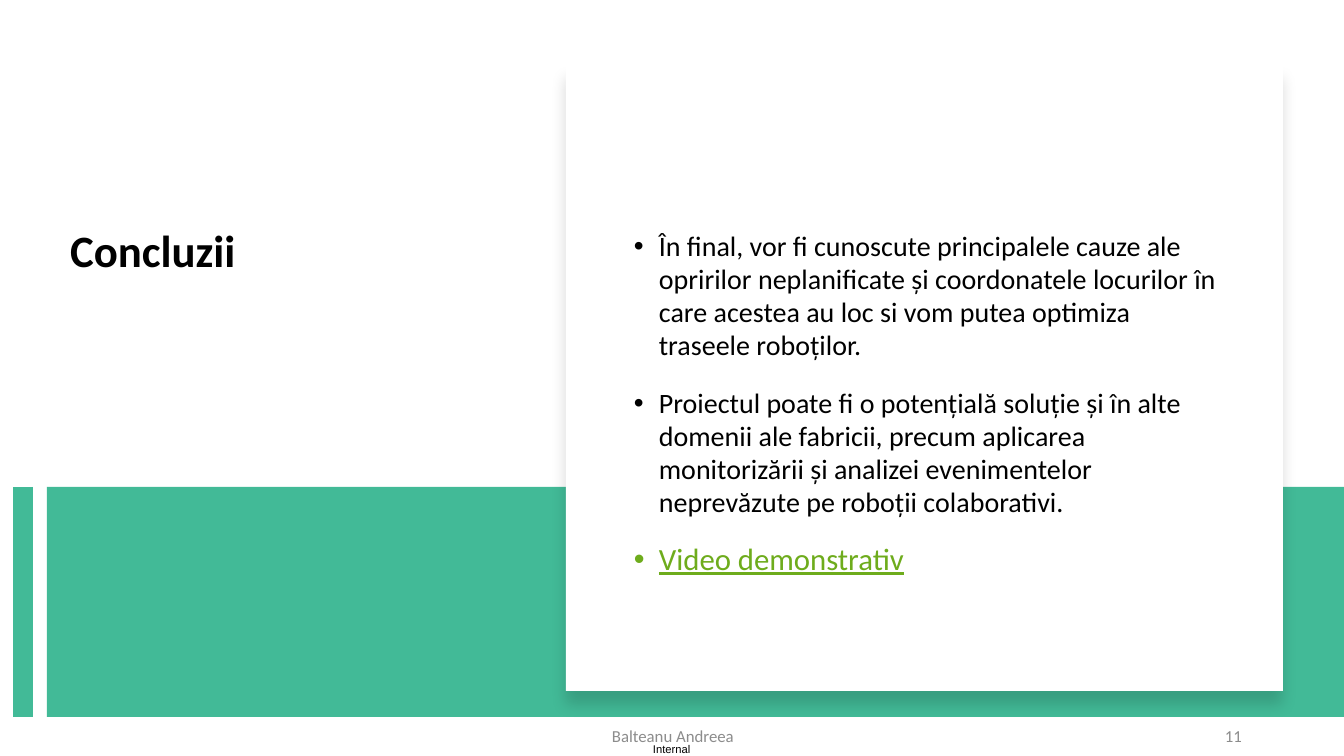
from lxml.etree import SubElement
from pptx import Presentation
from pptx.dml.color import RGBColor
from pptx.enum.shapes import MSO_CONNECTOR, MSO_SHAPE
from pptx.enum.text import MSO_ANCHOR, PP_ALIGN
from pptx.oxml.ns import qn
from pptx.util import Pt

PX = 914400 / 100.8
GREEN, GREY, LINK = "42BA97", "8C8C8C", "6EAC1C"


def px(*sizes):
    return [round(size * PX) for size in sizes]


def write(para, text, size, hue="000000", form=None, **font):
    """Add a run in Calibri, with paragraph and font values."""
    run = para.add_run()
    run.text = text
    run.font.color.rgb = RGBColor.from_string(hue)
    for key, val in {"name": "Calibri", "size": Pt(size), **font}.items():
        setattr(run.font, key, val)
    for key, val in (form or {}).items():
        setattr(para, key, val)


deck = Presentation()
deck.slide_width, deck.slide_height = px(1344, 756)
slide = deck.slides.add_slide(deck.slide_layouts[5])
shapes = slide.shapes

# Green band, white card and side bar
for box, hue in [((47, 487, 1297, 230), GREEN), ((566, 65, 717, 626), "FFFFFF")]:
    card = shapes.add_shape(MSO_SHAPE.RECTANGLE, *px(*box))
    card.fill.solid()
    card.fill.fore_color.rgb = RGBColor.from_string(hue)
    card.line.fill.background()
    card.shadow.inherit = False

glow = card._element.spPr.find(qn("a:effectLst"))
shade = SubElement(glow, qn("a:outerShdw"), blurRad=str(Pt(11)),
                   dist=str(Pt(10)), dir="5400000", rotWithShape="0")
tint = SubElement(shade, qn("a:srgbClr"), val="000000")
SubElement(tint, qn("a:alpha"), val="15000")

bar = shapes.add_connector(MSO_CONNECTOR.STRAIGHT, *px(23, 487, 23, 717))
bar.line.color.rgb = RGBColor.from_string(GREEN)
bar.line.width = Pt(14)
SubElement(bar._element.spPr, qn("a:effectLst"))

# Title
title = shapes.title
title.left, title.top, title.width, title.height = px(60, 223, 351, 60)
title.text_frame.vertical_anchor = MSO_ANCHOR.MIDDLE
write(title.text_frame.paragraphs[0], "Concluzii", 32, bold=True,
      form={"alignment": PP_ALIGN.LEFT, "line_spacing": 0.9})

# Bullets
points = [
    ("În final, vor fi cunoscute principalele cauze ale opririlor neplanificate și "
     "coordonatele locurilor în care acestea au loc si vom putea optimiza "
     "traseele roboților.", 20, "000000", 0.98, False),
    ("Proiectul poate fi o potențială soluție și în alte domenii ale fabricii, "
     "precum aplicarea monitorizării și analizei evenimentelor neprevăzute pe "
     "roboții colaborativi.", 20, "000000", 0.98, False),
    ("Video demonstrativ", 22, LINK, 0.9, True),
]
body = shapes.add_textbox(*px(624, 161, 611, 474)).text_frame
body.word_wrap = True
body.margin_top = px(69)[0]
indent = px(25)[0]
for num, (text, size, hue, space, under) in enumerate(points):
    para = body.add_paragraph() if num else body.paragraphs[0]
    write(para, text, size, hue, underline=under,
          form={"line_spacing": space, "space_after": Pt(18)})
    props = para._p.get_or_add_pPr()
    props.set("marL", str(indent))
    props.set("indent", str(-indent))
    SubElement(props, qn("a:buFont"), typeface="Arial")
    SubElement(props, qn("a:buChar"), char="•")

# Footer
notes = [
    ("Balteanu Andreea", (446, 716, 454, 40), PP_ALIGN.CENTER, 12, GREY, "Calibri", 10),
    ("11", (950, 716, 302, 40), PP_ALIGN.RIGHT, 12, GREY, "Calibri", 10),
    ("Internal", (653, 743, 40, 13), PP_ALIGN.LEFT, 8, "000000", "Arial", 0),
]
for text, box, align, size, hue, face, pad in notes:
    frame = shapes.add_textbox(*px(*box)).text_frame
    inset = px(pad)[0]
    form = {"word_wrap": pad > 0, "vertical_anchor": MSO_ANCHOR.MIDDLE,
            "margin_left": inset, "margin_right": inset,
            "margin_top": 0, "margin_bottom": 0}
    for key, val in form.items():
        setattr(frame, key, val)
    write(frame.paragraphs[0], text, size, hue, {"alignment": align}, name=face)

deck.save("out.pptx")
